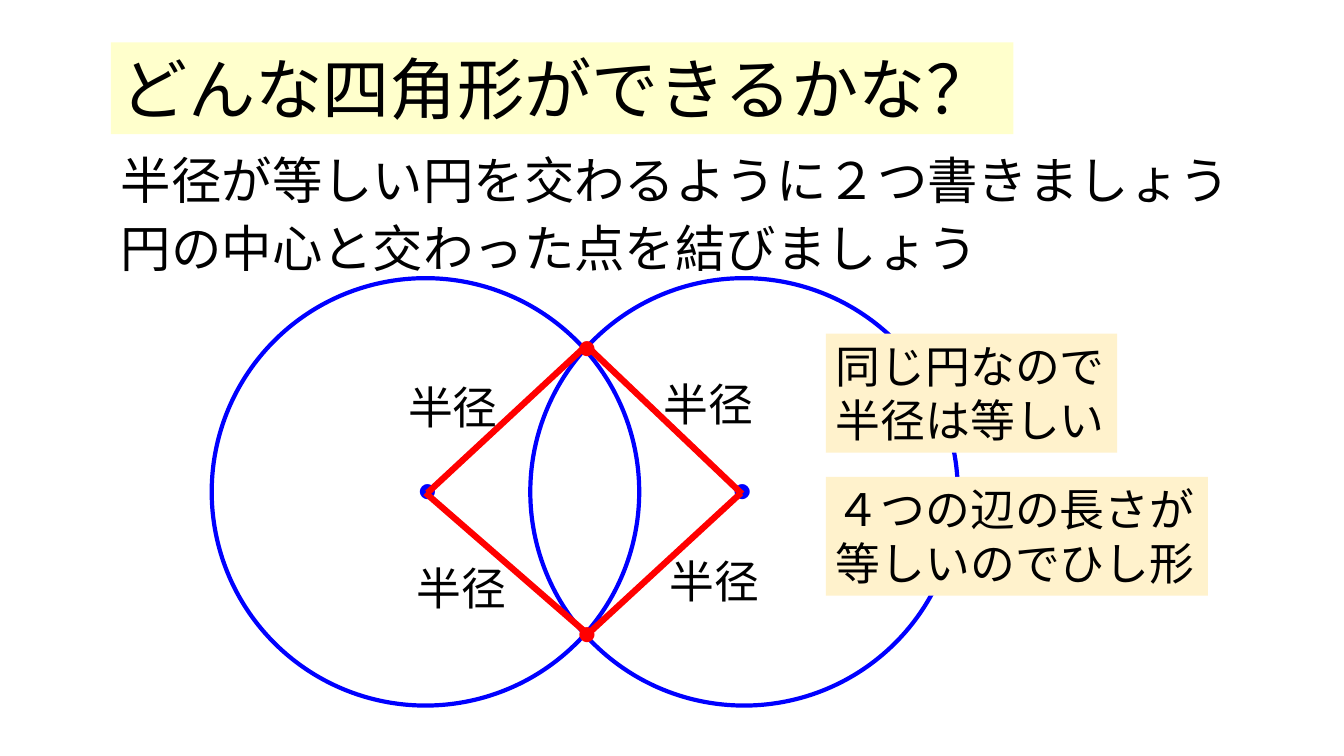
from lxml.etree import SubElement
from pptx import Presentation
from pptx.dml.color import RGBColor
from pptx.enum.shapes import MSO_CONNECTOR as CONN, MSO_SHAPE as SHAPE
from pptx.enum.text import MSO_ANCHOR as ANCHOR, MSO_AUTO_SIZE as FIT, PP_ALIGN as ALIGN
from pptx.oxml.ns import qn
from pptx.util import Emu, Pt

PX = 9144  # 100 px to the inch
FONT = "Noto Sans CJK JP"
C = {
    "ink": "000000",
    "title": "FFFFCC",
    "note": "FFF2CC",
    "circle": "0000FF",
    "side": "FF0000",
}


def px(*values):
    return [Emu(v * PX) for v in values]


def rgb(name):
    return RGBColor.from_string(C[name])


def write(sp, lines, size, color="ink", wrap=False):
    tf = sp.text_frame
    tf.text = "\n".join(lines)
    tf.word_wrap = wrap
    tf.auto_size = FIT.NONE
    tf.vertical_anchor = ANCHOR.TOP
    for p in tf.paragraphs:
        p.alignment = ALIGN.LEFT
        p.line_spacing = 1.0
        p.space_before = Pt(0)
        p.font.size = Pt(size)
        p.font.name = FONT
        p.font.color.rgb = rgb(color)
        # East Asian text takes its face from a:ea
        for r in p.runs:
            SubElement(r._r.get_or_add_rPr(), qn("a:ea"), typeface=FONT)


def add_text(slide, box, text, size, color="ink", wrap=False):
    sp = slide.shapes.add_textbox(*px(*box))
    write(sp, [text], size, color, wrap)


def add_title(slide, box, text):
    sp = slide.shapes.title
    sp.left, sp.top, sp.width, sp.height = px(*box)
    sp.fill.solid()
    sp.fill.fore_color.rgb = rgb("title")
    write(sp, [text], 48)


def add_note(slide, box, lines):
    sp = slide.shapes.add_shape(SHAPE.RECTANGLE, *px(*box))
    sp.shadow.inherit = False
    sp.fill.solid()
    sp.fill.fore_color.rgb = rgb("note")
    sp.line.fill.background()
    write(sp, lines, 32)


def add_circle(slide, x, y, size):
    sp = slide.shapes.add_shape(SHAPE.OVAL, *px(x, y, size, size))
    sp.shadow.inherit = False
    sp.fill.background()
    sp.line.color.rgb = rgb("circle")
    sp.line.width = Pt(3)


def add_dot(slide, cx, cy, color):
    w, h = 37, 30
    add_text(slide, (cx - w // 2, cy - h // 2, w, h), "●", 12, color)


def add_side(slide, *ends):
    line = slide.shapes.add_connector(CONN.STRAIGHT, *px(*ends))
    line.line.color.rgb = rgb("side")
    line.line.width = Pt(4.5)
    SubElement(line._element.spPr, qn("a:effectLst"))


def add_rhombus_figure(slide, box):
    x, y, w, size = box
    # Two equal circles
    for left in (x, x + w - size):
        add_circle(slide, left, y, size)
    # Centres in blue, crossing points in red
    for dx, dy, color in [(214, 212, "circle"), (526, 212, "circle"),
                          (372, 70, "side"), (372, 354, "side")]:
        add_dot(slide, x + dx, y + dy, color)
    # Four sides of the rhombus
    for x1, y1, x2, y2 in [(367, 71, 214, 213), (212, 213, 374, 354),
                           (525, 213, 372, 354), (377, 72, 526, 214)]:
        add_side(slide, x + x1, y + y1, x + x2, y + y2)


def add_radius_labels(slide, box):
    x, y = box[:2]
    for dx, dy in [(438, 93), (185, 96), (193, 275), (444, 268)]:
        add_text(slide, (x + dx, y + dy, 110, 64), "半径", 32)


def main():
    prs = Presentation()
    prs.slide_width, prs.slide_height = px(1333, 750)
    slide = prs.slides.add_slide(prs.slide_layouts[5])
    figure = (210, 276, 740, 424)

    # Heading and instructions
    add_title(slide, (110, 42, 895, 91), "どんな四角形ができるかな？")
    add_text(slide, (110, 143, 1128, 71),
             "半径が等しい円を交わるように２つ書きましょう", 36, wrap=True)
    add_text(slide, (110, 210, 875, 71),
             "円の中心と交わった点を結びましょう", 36, wrap=True)

    # Figure, explanations and labels
    add_rhombus_figure(slide, figure)
    add_note(slide, (819, 331, 289, 118), ["同じ円なので", "半径は等しい"])
    add_note(slide, (819, 473, 379, 118), ["４つの辺の長さが", "等しいのでひし形"])
    add_radius_labels(slide, figure)

    prs.save("out.pptx")


if __name__ == "__main__":
    main()
